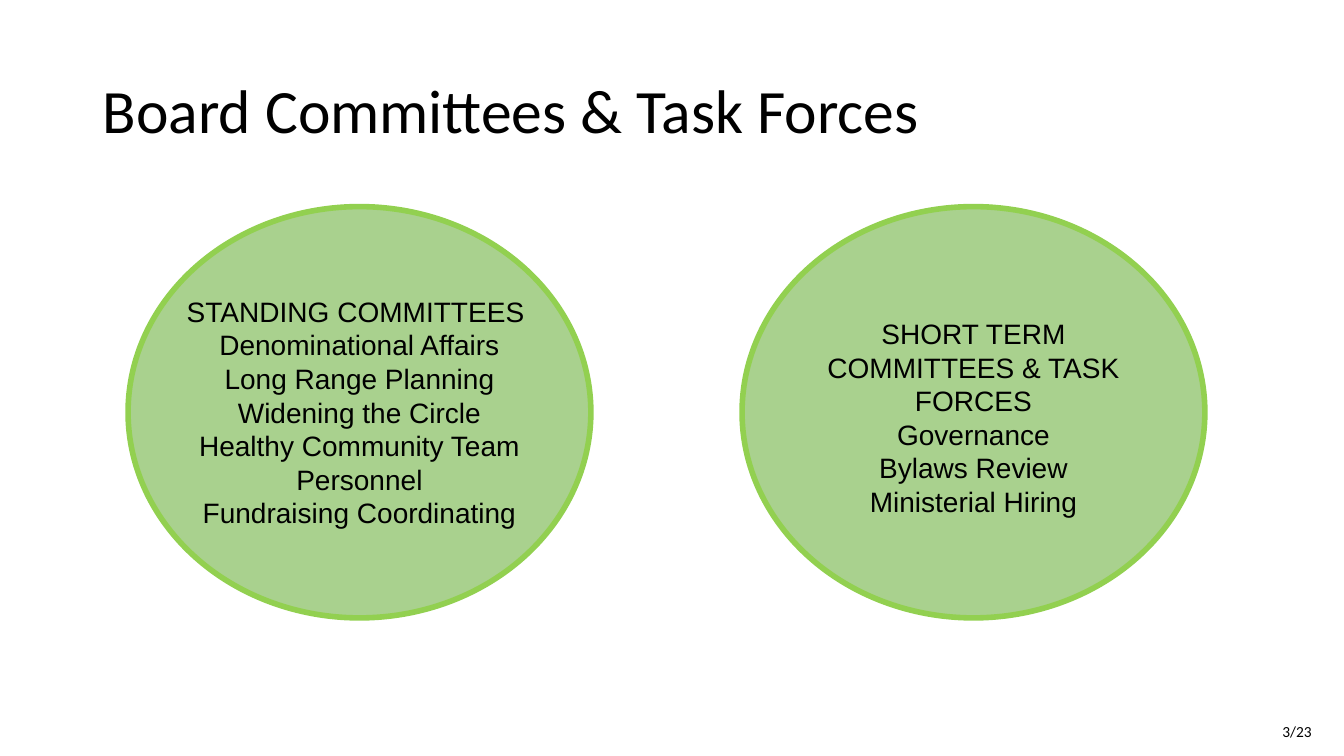
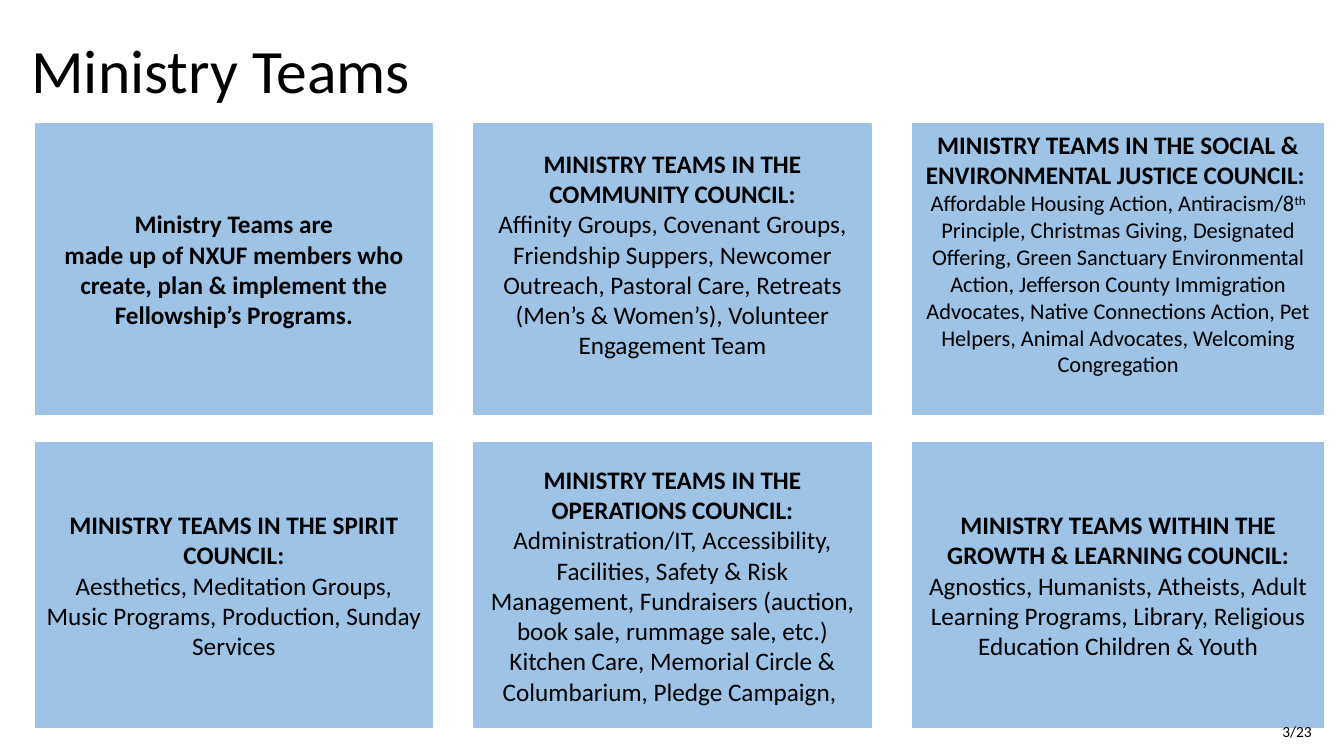
from dataclasses import dataclass
from itertools import accumulate

from pptx import Presentation
from pptx import util as u
from pptx.dml.color import RGBColor
from pptx.enum import shapes, text


@dataclass(frozen=True)
class Theme:
    ink: str = "000000"
    circle_fill: str = "A9D18E"
    circle_line: str = "92D050"
    card: str = "9DC3E6"
    heading_font: str = "Calibri"
    list_font: str = "Arial"
    title_size: int = 44
    list_size: int = 20
    card_size: int = 18
    dense_size: int = 16
    footer_size: int = 11


THEME = Theme()
SUPERSCRIPT = "30000"


def apply(target, formats):
    for name, value in formats.items():
        setattr(target, name, value)


class Deck:
    def __init__(self, theme):
        self.theme = theme
        self.prs = Presentation()
        apply(self.prs, {"slide_width": u.Inches(13.33), "slide_height": u.Inches(7.5)})
        self.slide = None

    def add_slide(self, title, left, top):
        self.slide = self.prs.slides.add_slide(self.prs.slide_layouts[5])
        heading = self.slide.shapes.title
        apply(heading, {"left": u.Inches(left), "top": u.Inches(top),
                        "width": u.Inches(11.5), "height": u.Inches(1.45)})
        apply(heading.text_frame, {"auto_size": text.MSO_AUTO_SIZE.NONE,
                                   "vertical_anchor": text.MSO_ANCHOR.MIDDLE})
        paragraph = heading.text_frame.paragraphs[0]
        apply(paragraph, {"alignment": text.PP_ALIGN.LEFT, "line_spacing": 0.9})
        self.run(paragraph, title, self.theme.title_size)

    def run(self, paragraph, words, size, font=None, bold=False, baseline=None):
        run = paragraph.add_run()
        run.text = words
        apply(run.font, {"size": u.Pt(size), "bold": bold,
                         "name": font or self.theme.heading_font})
        run.font.color.rgb = RGBColor.from_string(self.theme.ink)
        if baseline:
            run.font._element.set("baseline", baseline)

    def paragraphs(self, frame, contents):
        """Write centred paragraphs, each a list of run settings."""
        for index, runs in enumerate(contents):
            paragraph = frame.add_paragraph() if index else frame.paragraphs[0]
            paragraph.alignment = text.PP_ALIGN.CENTER
            for settings in runs:
                self.run(paragraph, **settings)

    def shape(self, kind, box, fill, line, line_width):
        shape = self.slide.shapes.add_shape(kind, *map(u.Inches, box))
        shape.shadow.inherit = False
        shape.fill.solid()
        shape.fill.fore_color.rgb = RGBColor.from_string(fill)
        shape.line.color.rgb = RGBColor.from_string(line)
        shape.line.width = u.Pt(line_width)
        return shape

    def text_box(self, box, wrap=True):
        frame = self.slide.shapes.add_textbox(*map(u.Inches, box)).text_frame
        frame.word_wrap = wrap
        return frame

    def circle(self, left, list_top, list_width, lines):
        """Draw a circle with a list centred across it."""
        width = 4.59
        self.shape(shapes.MSO_SHAPE.OVAL, (left, 2.05, width, 4.08),
                   self.theme.circle_fill, self.theme.circle_line, 4)
        list_left = left + (width - list_width) / 2
        frame = self.text_box((list_left, list_top, list_width, 2.43))
        self.paragraphs(frame, [[{"words": line, "size": self.theme.list_size,
                                  "font": self.theme.list_font}] for line in lines])

    def card(self, box, heading, body, frame_format):
        card = self.shape(shapes.MSO_SHAPE.RECTANGLE, box,
                          self.theme.card, self.theme.card, 1)
        apply(card.text_frame, {"word_wrap": True,
                                "vertical_anchor": text.MSO_ANCHOR.MIDDLE,
                                **frame_format})
        size = self.theme.card_size
        self.paragraphs(card.text_frame, [
            [{"words": heading, "size": size, "bold": True}],
            [{"size": size, **settings} for settings in body]])

    def footer(self, words):
        frame = self.text_box((12.62, 7.11, 0.5, 0.29), wrap=False)
        self.run(frame.paragraphs[0], words, self.theme.footer_size)


COMMITTEES = [
    (1.27, 2.87, 3.82, [
        "STANDING COMMITTEES ", "Denominational Affairs", "Long Range Planning",
        "Widening the Circle", "Healthy Community Team", "Personnel",
        "Fundraising Coordinating"]),
    (7.36, 3.09, 3.43, [
        "SHORT TERM COMMITTEES & TASK FORCES", "Governance", "Bylaws Review",
        "Ministerial Hiring"]),
]

DENSE = {"size": THEME.dense_size}
TEAMS = [
    ("Ministry Teams are",
     [{"words": "made up of NXUF members who create, plan & implement the "
                "Fellowship’s Programs.", "bold": True}], {}),
    ("MINISTRY TEAMS IN THE COMMUNITY COUNCIL:",
     [{"words": "Affinity Groups, Covenant Groups, Friendship Suppers, Newcomer "
                "Outreach, Pastoral Care, Retreats (Men’s & Women’s), Volunteer "
                "Engagement Team"}],
     {"margin_bottom": u.Inches(0.35)}),
    ("MINISTRY TEAMS IN THE SOCIAL & ENVIRONMENTAL JUSTICE COUNCIL: ",
     [{"words": "Affordable Housing Action, Antiracism/8", **DENSE},
      {"words": "th", "baseline": SUPERSCRIPT, **DENSE},
      {"words": " Principle, Christmas Giving, Designated Offering, Green Sanctuary "
                "Environmental Action, Jefferson County Immigration Advocates, Native "
                "Connections Action, Pet Helpers, Animal Advocates, Welcoming "
                "Congregation", **DENSE}],
     {"vertical_anchor": text.MSO_ANCHOR.TOP}),
    ("MINISTRY TEAMS IN THE SPIRIT COUNCIL:",
     [{"words": "Aesthetics, Meditation Groups, Music Programs, Production, Sunday "
                "Services"}], {}),
    ("MINISTRY TEAMS IN THE OPERATIONS COUNCIL:",
     [{"words": "Administration/IT, Accessibility, Facilities, Safety & Risk "
                "Management, Fundraisers (auction, book sale, rummage sale, etc.) "
                "Kitchen Care, Memorial Circle & Columbarium, Pledge Campaign, "}], {}),
    ("MINISTRY TEAMS WITHIN THE GROWTH & LEARNING COUNCIL:",
     [{"words": "Agnostics, Humanists, Atheists, Adult Learning Programs, Library, "
                "Religious Education Children & Youth"}], {}),
]


def tracks(start, sizes, gap):
    """Pair each column or row start with its size."""
    starts = accumulate(sizes[:-1], lambda at, size: at + size + gap, initial=start)
    return list(zip(starts, sizes))


def main():
    deck = Deck(THEME)
    page = "3/23"

    deck.add_slide("Board Committees & Task Forces", 0.92, 0.4)
    for committee in COMMITTEES:
        deck.circle(*committee)
    deck.footer(page)

    deck.add_slide("Ministry Teams", 0.21, 0)
    columns = tracks(0.35, [3.94, 3.94, 4.08], 0.41)
    rows = tracks(1.23, [2.88, 2.83], 0.28)
    cells = [(left, top, width, height)
             for top, height in rows for left, width in columns]
    for cell, team in zip(cells, TEAMS):
        deck.card(cell, *team)
    deck.footer(page)

    deck.prs.save("out.pptx")


if __name__ == "__main__":
    main()
